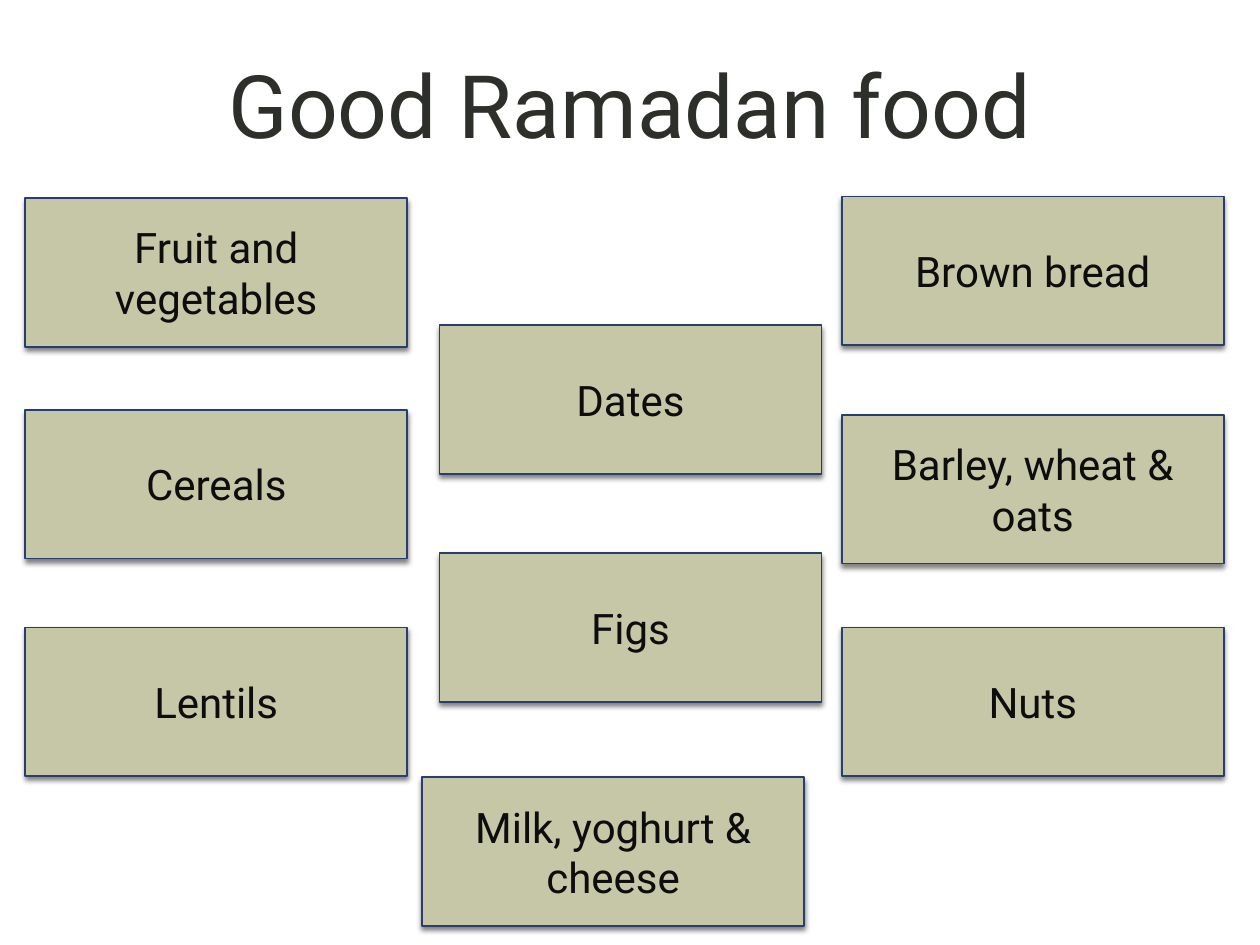
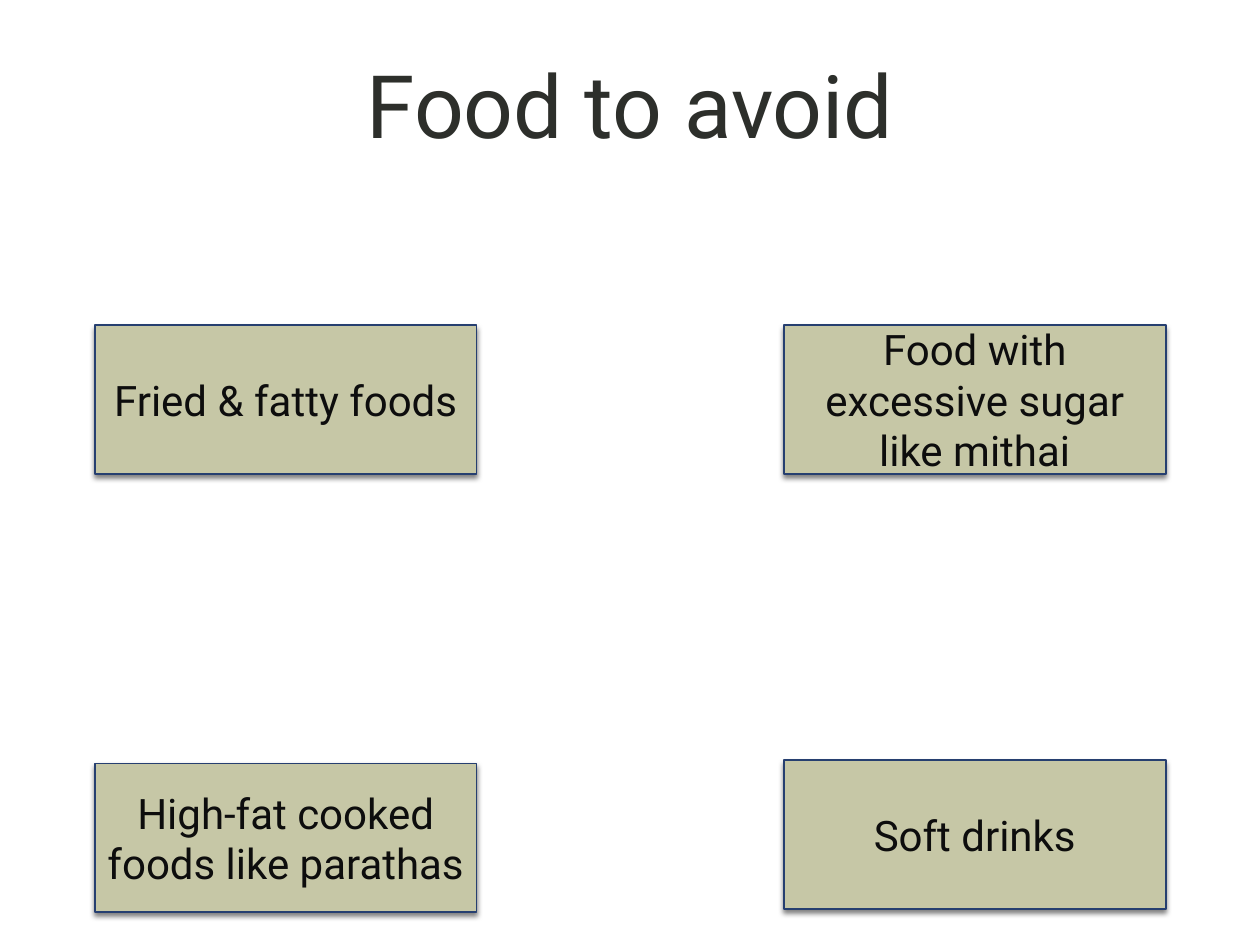
"""Build two slides on good Ramadan food and food to avoid."""
import lxml.etree
import pptx
import pptx.dml.color
import pptx.enum.shapes
import pptx.enum.text
import pptx.oxml.ns
import pptx.util

Cm = pptx.util.Cm
Pt = pptx.util.Pt
qn = pptx.oxml.ns.qn

FONT = "Roboto"
TITLE, TEXT, BOX, EDGE, SHADOW = "2D2F2B", "0D0D0D", "C6C7A6", "263F70", "000000"
BOX_W, BOX_H = 7.7, 3
LEFT, MIDDLE, RIGHT = 0.51, 8.86, 16.97
AVOID_LEFT, AVOID_RIGHT = 1.91, 15.8

SLIDES = [
    ("Good Ramadan food", [
        ("Fruit and vegetables", LEFT, 3.99),
        ("Brown bread", RIGHT, 3.96),
        ("Cereals", LEFT, 8.26),
        ("Barley, wheat & oats", RIGHT, 8.36),
        ("Lentils", LEFT, 12.65),
        ("Nuts", RIGHT, 12.65),
        ("Milk, yoghurt & cheese", 8.51, 15.67),
        ("Dates", MIDDLE, 6.55),
        ("Figs", MIDDLE, 11.15),
    ]),
    ("Food to avoid", [
        ("Fried & fatty foods", AVOID_LEFT, 6.55),
        ("Food with excessive sugar like mithai", AVOID_RIGHT, 6.55),
        ("High-fat cooked foods like parathas", AVOID_LEFT, 15.39),
        ("Soft drinks", AVOID_RIGHT, 15.32),
    ]),
]


def rgb(color):
    return pptx.dml.color.RGBColor.from_string(color)


def write(sp, text, size, color):
    tf = sp.text_frame
    tf.word_wrap = True
    tf.vertical_anchor = pptx.enum.text.MSO_ANCHOR.MIDDLE
    p = tf.paragraphs[0]
    p.alignment = pptx.enum.text.PP_ALIGN.CENTER
    r = p.add_run()
    r.text = text
    r.font.name = FONT
    r.font.size = Pt(size)
    r.font.color.rgb = rgb(color)


prs = pptx.Presentation()
prs.slide_width, prs.slide_height = Cm(25.4), Cm(19.05)

for title, foods in SLIDES:
    s = prs.slides.add_slide(prs.slide_layouts[6])
    write(s.shapes.add_textbox(Cm(1.91), Cm(0.18), Cm(21.59), Cm(3.81)), title, 50, TITLE)
    for food, x, y in foods:
        sp = s.shapes.add_shape(pptx.enum.shapes.MSO_SHAPE.RECTANGLE,
                                Cm(x), Cm(y), Cm(BOX_W), Cm(BOX_H))
        sp.fill.solid()
        sp.fill.fore_color.rgb = rgb(BOX)
        sp.line.color.rgb = rgb(EDGE)
        sp.line.width = Pt(1)
        sp.shadow.inherit = False
        effects = sp._element.spPr.find(qn("a:effectLst"))
        shadow = lxml.etree.SubElement(effects, qn("a:outerShdw"), blurRad=str(Pt(3)),
                                       dist=str(Pt(2)), dir="5400000", rotWithShape="0")
        color = lxml.etree.SubElement(shadow, qn("a:srgbClr"), val=SHADOW)
        lxml.etree.SubElement(color, qn("a:alpha"), val="50000")
        write(sp, food, 24, TEXT)

prs.save("out.pptx")
